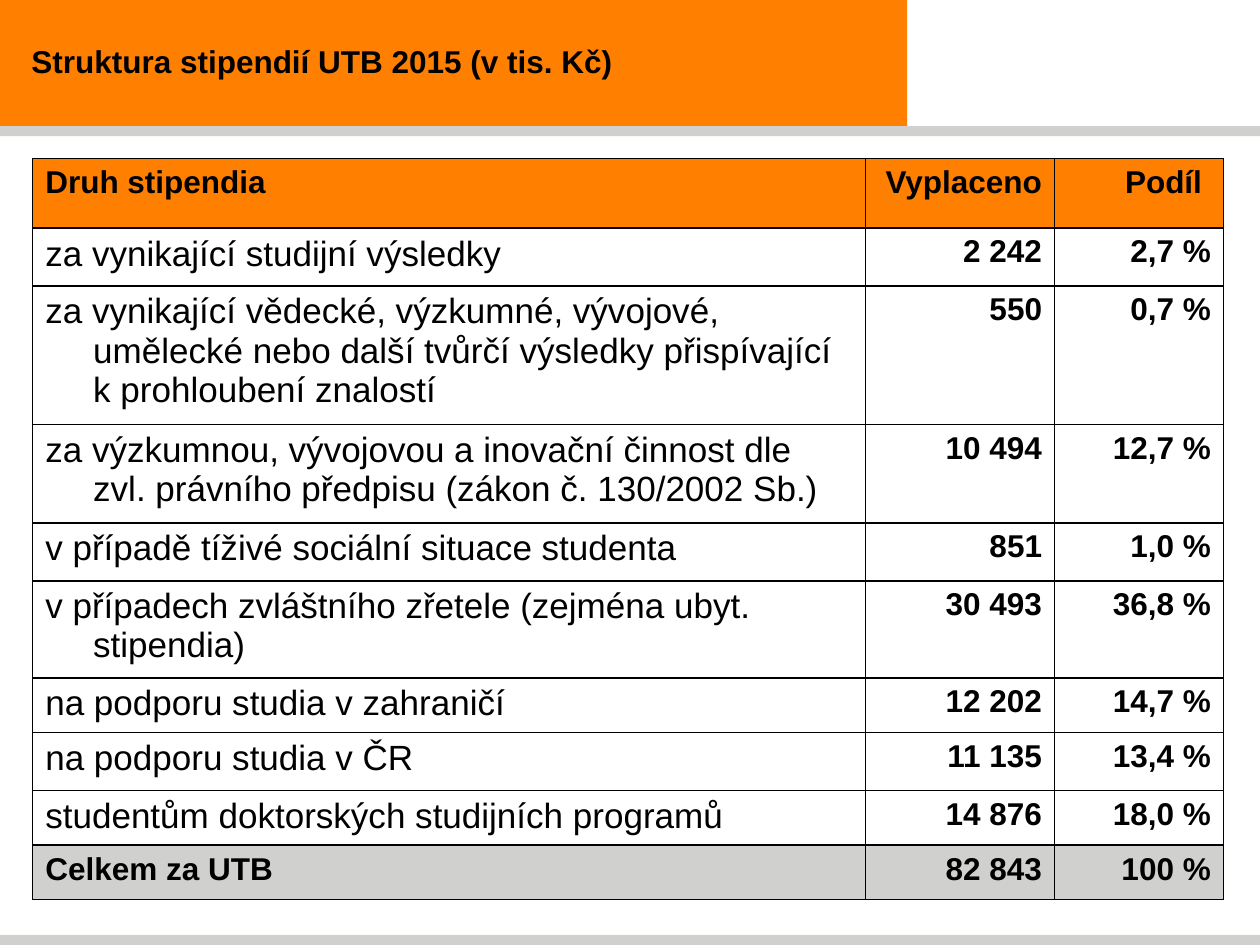
from lxml.etree import SubElement
from pptx import Presentation
from pptx.dml.color import RGBColor
from pptx.enum.shapes import MSO_SHAPE as Shape
from pptx.enum.text import MSO_ANCHOR as Anchor, PP_ALIGN as Align
from pptx.oxml.ns import qn
from pptx.util import Inches, Pt

COLORS = {"orange": "FF8001", "gray": "D0D0CE", "black": "000000"}
BARS = [
    (0, 0, 7.2, 1, "orange"),
    (0, 7.42, 10, 0.08, "gray"),
    (0, 1, 10, 0.08, "gray"),
]
COLUMN_WIDTHS = [6.61, 1.5, 1.34]
ROW_HEIGHTS = [0.55, 0.46, 1.1, 0.78, 0.46, 0.77, 0.43, 0.46, 0.43, 0.43]
SCHOLARSHIPS = [
    ("Druh stipendia", "Vyplaceno", "Podíl "),
    ("za vynikající studijní výsledky", "2 242", "2,7 %"),
    ("za vynikající vědecké, výzkumné, vývojové, umělecké nebo další "
     "tvůrčí výsledky přispívající k prohloubení znalostí", "550", "0,7 %"),
    ("za výzkumnou, vývojovou a inovační činnost dle zvl. právního "
     "předpisu (zákon č. 130/2002 Sb.)", "10 494", "12,7 %"),
    ("v případě tíživé sociální situace studenta", "851", "1,0 %"),
    ("v případech zvláštního zřetele (zejména ubyt. stipendia)", "30 493", "36,8 %"),
    ("na podporu studia v zahraničí", "12 202", "14,7 %"),
    ("na podporu studia v ČR", "11 135", "13,4 %"),
    ("studentům doktorských studijních programů", "14 876", "18,0 %"),
    ("Celkem za UTB", "82 843", "100 %"),
]
EMPHASIS = {"name": "Arial", "size": Pt(18), "bold": True}
BODY = {"name": "Arial", "size": Pt(20), "bold": False}


def color(name):
    return RGBColor.from_string(COLORS[name])


def set_attributes(target, values):
    for name, value in values.items():
        setattr(target, name, value)


def write(paragraph, text, font_values):
    run = paragraph.add_run()
    run.text = text
    set_attributes(run.font, font_values)
    run.font.color.rgb = color("black")


def add_bar(slide, left, top, width, height, fill):
    shape = slide.shapes.add_shape(
        Shape.RECTANGLE, Inches(left), Inches(top), Inches(width), Inches(height))
    shape.shadow.inherit = False
    shape.fill.solid()
    shape.fill.fore_color.rgb = color(fill)
    shape.line.fill.background()


def add_title(slide, text):
    box = slide.shapes.add_textbox(0, 0, Inches(7.2), Inches(0.97))
    set_attributes(box.text_frame, {
        "word_wrap": True,
        "vertical_anchor": Anchor.MIDDLE,
        "margin_left": Inches(0.25),
    })
    write(box.text_frame.paragraphs[0], text, EMPHASIS)


def hang_indent(paragraph, indent):
    properties = paragraph._p.get_or_add_pPr()
    properties.set("marL", str(int(indent)))
    properties.set("indent", str(-int(indent)))


def add_borders(cell):
    properties = cell._tc.get_or_add_tcPr()
    for side in ("a:lnL", "a:lnR", "a:lnT", "a:lnB"):
        line = SubElement(properties, qn(side), w=str(int(Pt(1))))
        fill = SubElement(line, qn("a:solidFill"))
        SubElement(fill, qn("a:srgbClr"), val=COLORS["black"])


def format_cell(cell, text, font_values, alignment, fill):
    add_borders(cell)
    if fill:
        cell.fill.solid()
        cell.fill.fore_color.rgb = color(fill)
    else:
        cell.fill.background()
    paragraph = cell.text_frame.paragraphs[0]
    hang_indent(paragraph, Inches(0.38))
    paragraph.alignment = alignment
    write(paragraph, text, font_values)


def add_scholarship_table(slide):
    table = slide.shapes.add_table(
        len(SCHOLARSHIPS), len(COLUMN_WIDTHS), Inches(0.26), Inches(1.26),
        Inches(sum(COLUMN_WIDTHS)), Inches(sum(ROW_HEIGHTS))).table
    set_attributes(table, {"first_row": False, "horz_banding": False})
    for column, width in zip(table.columns, COLUMN_WIDTHS):
        column.width = Inches(width)
    for row, height in zip(table.rows, ROW_HEIGHTS):
        row.height = Inches(height)
    row_fills = {0: "orange", len(SCHOLARSHIPS) - 1: "gray"}
    for row_index, texts in enumerate(SCHOLARSHIPS):
        fill = row_fills.get(row_index)
        for column_index, text in enumerate(texts):
            is_label = column_index == 0
            format_cell(
                table.cell(row_index, column_index), text,
                BODY if is_label and not fill else EMPHASIS,
                Align.LEFT if is_label else Align.RIGHT, fill)


def main():
    presentation = Presentation()
    set_attributes(presentation, {"slide_width": Inches(10), "slide_height": Inches(7.5)})
    slide = presentation.slides.add_slide(presentation.slide_layouts[6])
    for bar in BARS:
        add_bar(slide, *bar)
    add_title(slide, "Struktura stipendií UTB 2015 (v tis. Kč)")
    add_scholarship_table(slide)
    presentation.save("out.pptx")


if __name__ == "__main__":
    main()
